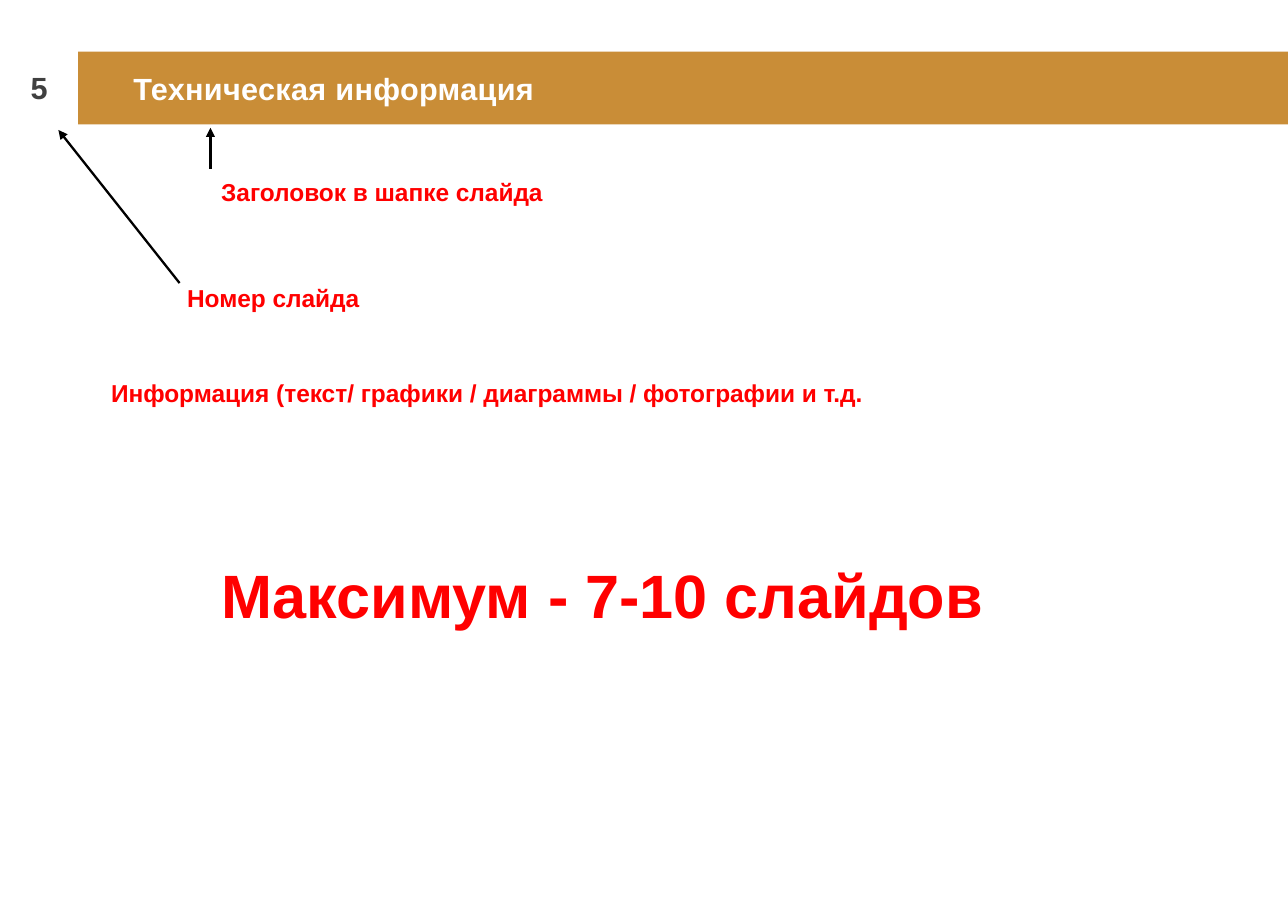
import pptx
import pptx.dml.color
import pptx.enum.shapes
import pptx.enum.text
import pptx.oxml.ns
import pptx.util
from lxml import etree

Inches, Pt = pptx.util.Inches, pptx.util.Pt
Align = pptx.enum.text.PP_ALIGN
qn = pptx.oxml.ns.qn


def color(hex_value):
    return pptx.dml.color.RGBColor.from_string(hex_value)


class SlideBuilder:
    FONT = "Arial"
    BAR, NOTE, NUMBER = "C98D37", "FF0000", "404040"
    WHITE, BLACK = "FFFFFF", "000000"

    def __init__(self, slide):
        self.slide = slide

    def bar(self, left, top, width, height):
        bar = self.slide.shapes.add_shape(
            pptx.enum.shapes.MSO_SHAPE.RECTANGLE,
            Inches(left), Inches(top), Inches(width), Inches(height))
        bar.shadow.inherit = False
        bar.fill.solid()
        bar.fill.fore_color.rgb = color(self.BAR)
        bar.line.fill.background()
        # The bar lies behind the title
        self.slide.shapes.title.element.addprevious(bar.element)

    def add_text(self, holder, text, size, fill, align=Align.LEFT, wrap=True):
        frame = holder.text_frame
        frame.word_wrap = wrap
        frame.auto_size = pptx.enum.text.MSO_AUTO_SIZE.SHAPE_TO_FIT_TEXT
        frame.vertical_anchor = pptx.enum.text.MSO_ANCHOR.TOP
        paragraph = frame.paragraphs[0]
        paragraph.alignment = align
        run = paragraph.add_run()
        run.text = text
        run.font.name = self.FONT
        run.font.size = Pt(size)
        run.font.bold = True
        run.font.color.rgb = color(fill)

    def header(self, holder, text, fill, align=Align.LEFT):
        self.add_text(holder, text, 20, fill, align)
        holder.text_frame.paragraphs[0].space_after = Pt(6)
        # Letter spacing of 0.2 pt
        holder.element.find(".//" + qn("a:rPr")).set("spc", "20")

    def title(self, text, left, top, width, height):
        title = self.slide.shapes.title
        title.left, title.top = Inches(left), Inches(top)
        title.width, title.height = Inches(width), Inches(height)
        self.header(title, text, self.WHITE)

    def box(self, left, top, width, height):
        return self.slide.shapes.add_textbox(
            Inches(left), Inches(top), Inches(width), Inches(height))

    def slide_number(self, text, left, top, width, height):
        self.header(self.box(left, top, width, height), text, self.NUMBER,
                    Align.CENTER)

    def note(self, text, left, top, width, height, size=16, wrap=True):
        self.add_text(self.box(left, top, width, height), text, size,
                      self.NOTE, wrap=wrap)

    def arrow(self, x1, y1, x2, y2):
        arrow = self.slide.shapes.add_connector(
            pptx.enum.shapes.MSO_CONNECTOR.STRAIGHT,
            Inches(x1), Inches(y1), Inches(x2), Inches(y2))
        arrow.line.color.rgb = color(self.BLACK)
        arrow.line.width = Pt(1.5)
        line = arrow.element.find(".//" + qn("a:ln"))
        etree.SubElement(line, qn("a:tailEnd"), type="triangle")
        line.addnext(etree.Element(qn("a:effectLst")))


def main():
    deck = pptx.Presentation()
    deck.slide_width, deck.slide_height = Inches(11.69), Inches(8.27)
    page = SlideBuilder(deck.slides.add_slide(deck.slide_layouts[5]))

    # Header
    page.bar(0.71, 0.47, 10.99, 0.66)
    page.title("Техническая информация", 1.11, 0.58, 8.41, 0.44)
    page.slide_number("5", 0, 0.58, 0.71, 0.44)

    # Arrows to the title and the slide number
    page.arrow(1.91, 1.53, 1.91, 1.16)
    page.arrow(1.63, 2.57, 0.53, 1.18)

    # Explanations
    page.note("Заголовок в шапке слайда", 1.91, 1.56, 3.16, 0.37, wrap=False)
    page.note("Номер слайда", 1.6, 2.52, 1.78, 0.37, wrap=False)
    page.note("Информация (текст/ графики / диаграммы / фотографии и т.д.",
              0.91, 3.38, 9.68, 0.37)
    page.note("Максимум - 7-10 слайдов", 1.91, 5.01, 8.1, 0.77, size=40)

    deck.save("out.pptx")


if __name__ == "__main__":
    main()
